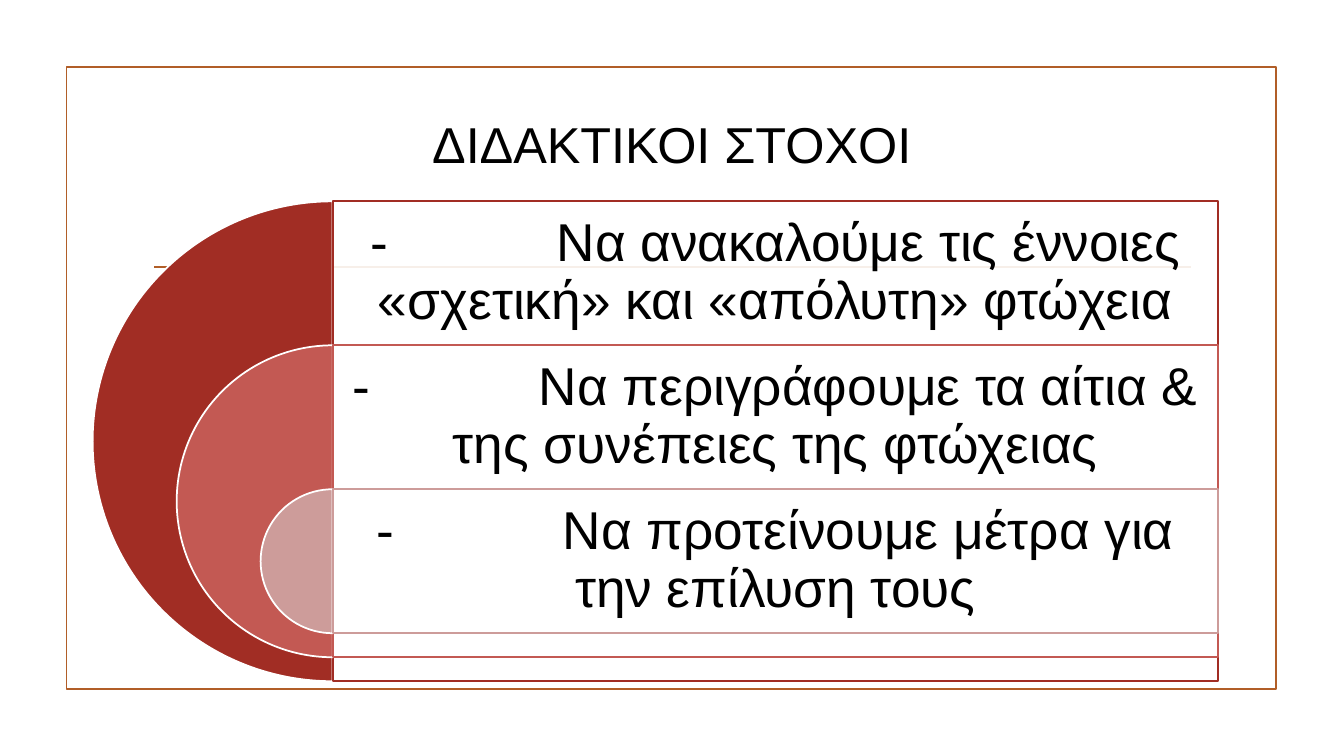
from lxml import etree
from pptx import Presentation
from pptx.dml.color import RGBColor
from pptx.enum.shapes import MSO_CONNECTOR, MSO_SHAPE
from pptx.enum.text import MSO_ANCHOR, PP_ALIGN
from pptx.oxml.ns import qn
from pptx.util import Pt

RECT, PIE = MSO_SHAPE.RECTANGLE, MSO_SHAPE.PIE
LINE = MSO_CONNECTOR.STRAIGHT
MIDDLE, CENTER = MSO_ANCHOR.MIDDLE, PP_ALIGN.CENTER

WHITE = RGBColor(0xFF, 0xFF, 0xFF)
BLACK = RGBColor(0x00, 0x00, 0x00)
ORANGE = RGBColor(0xB1, 0x5E, 0x28)
FONT = "Arial"
TAB = 133

GOALS = [
    ("-\tΝα ανακαλούμε τις έννοιες «σχετική» και «απόλυτη» φτώχεια",
     RGBColor(0xA1, 0x2D, 0x24)),
    ("-\tΝα περιγράφουμε τα αίτια & της συνέπειες της φτώχειας",
     RGBColor(0xC3, 0x59, 0x53)),
    ("-\tΝα προτείνουμε μέτρα για την επίλυση τους",
     RGBColor(0xCD, 0x9C, 0x9A)),
]


def add_form(slide, kind, box, fill, edge):
    form = slide.shapes.add_shape(kind, *map(Pt, box))
    form.shadow.inherit = False
    if fill is None:
        form.fill.background()
    else:
        form.fill.solid()
        form.fill.fore_color.rgb = fill
    form.line.color.rgb = edge
    form.line.width = Pt(1.25)
    return form


def add_label(slide, box, text, size, inset, tab=None):
    frame = slide.shapes.add_textbox(*map(Pt, box)).text_frame
    frame.word_wrap = True
    frame.vertical_anchor = MIDDLE
    frame.margin_left = frame.margin_right = Pt(inset)
    frame.margin_top = frame.margin_bottom = Pt(inset)
    frame.text = text
    para = frame.paragraphs[0]
    para.alignment = CENTER
    para.line_spacing = 0.9
    if tab:
        stops = etree.SubElement(para._p.get_or_add_pPr(), qn("a:tabLst"))
        etree.SubElement(stops, qn("a:tab"), pos=str(Pt(tab)), algn="l")
    font = para.runs[0].font
    font.name, font.size = FONT, Pt(size)
    font.color.rgb = BLACK


def add_frame(slide, box):
    """Thin border with a rule across it."""
    left, top, width, height = box
    add_form(slide, RECT, box, None, ORANGE)
    y = top + 142.6
    rule = slide.shapes.add_connector(
        LINE, Pt(left + 62.6), Pt(y), Pt(left + width - 61.2), Pt(y))
    rule.line.color.rgb = ORANGE
    rule.line.width = Pt(1.25)
    etree.SubElement(rule._element.spPr, qn("a:effectLst"))


def add_goals(slide, box):
    """Nested half discs, each with a panel to the right of its centre."""
    left, top, width, height = box
    axis = left + height / 2
    span = left + width - axis
    row = 0.3 * height
    for i, (text, color) in enumerate(GOALS):
        y = top + i * row
        size = height * (1 - 0.35 * i)
        # Left half disc
        disc = add_form(slide, PIE, (axis - size / 2, y, size, size),
                        color, WHITE)
        disc.adjustments[0] = 54
        disc.adjustments[1] = 162
        # Slightly transparent panel
        panel = add_form(slide, RECT, (axis, y, span, size), WHITE, color)
        tint = panel._element.spPr.find(qn("a:solidFill"))[0]
        etree.SubElement(tint, qn("a:alpha"), val="90000")
        add_label(slide, (axis, y, span, row), text, 38, 11.4, TAB)


def main():
    deck = Presentation()
    deck.slide_width, deck.slide_height = Pt(960), Pt(540)
    slide = deck.slides.add_slide(deck.slide_layouts[6])
    add_frame(slide, (47.6, 48, 864, 444))
    add_label(slide, (90, 78, 780, 54), "ΔΙΔΑΚΤΙΚΟΙ ΣΤΟΧΟΙ", 36, 3.6)
    add_goals(slide, (66.2, 143.8, 804, 342.8))
    deck.save("out.pptx")


if __name__ == "__main__":
    main()
